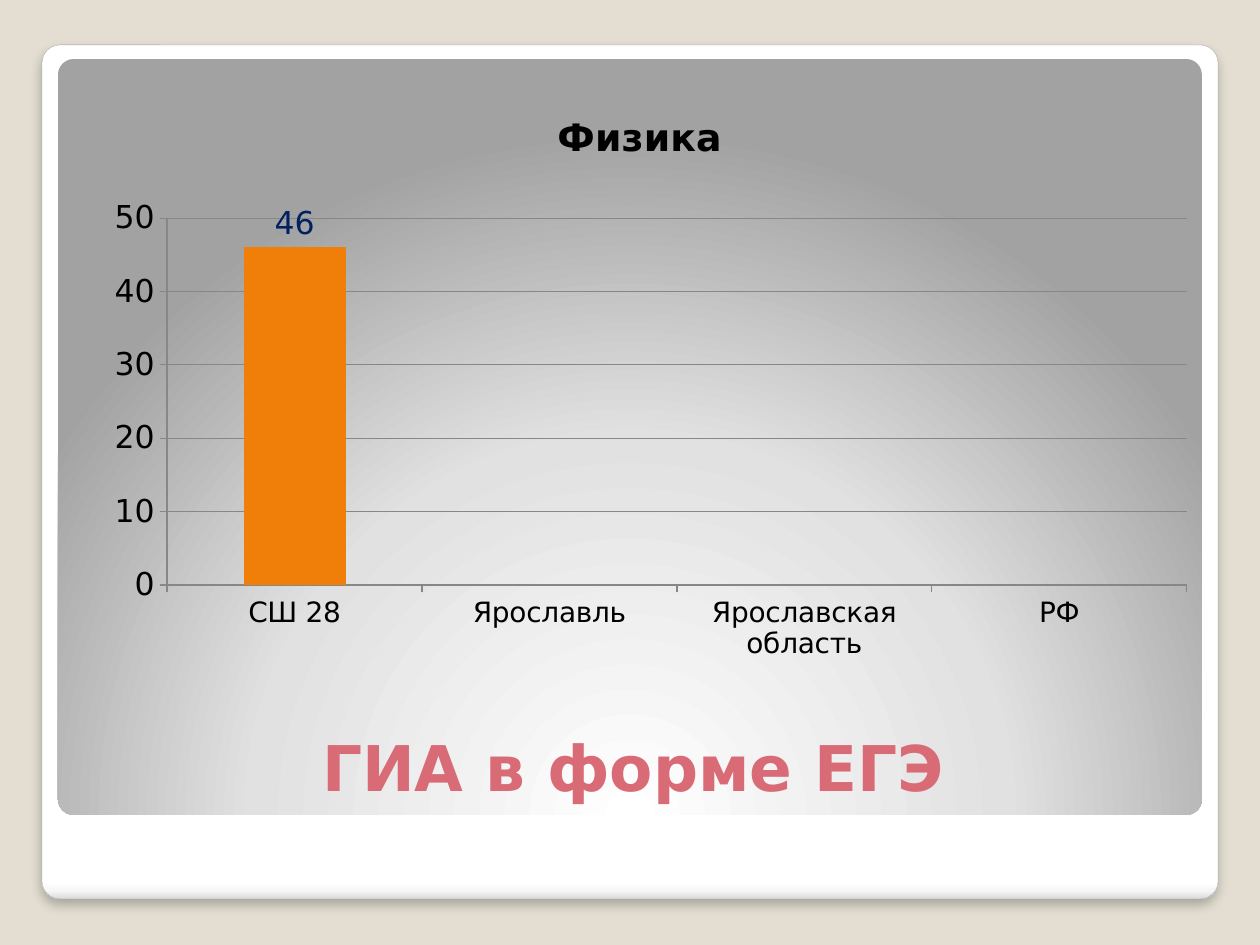
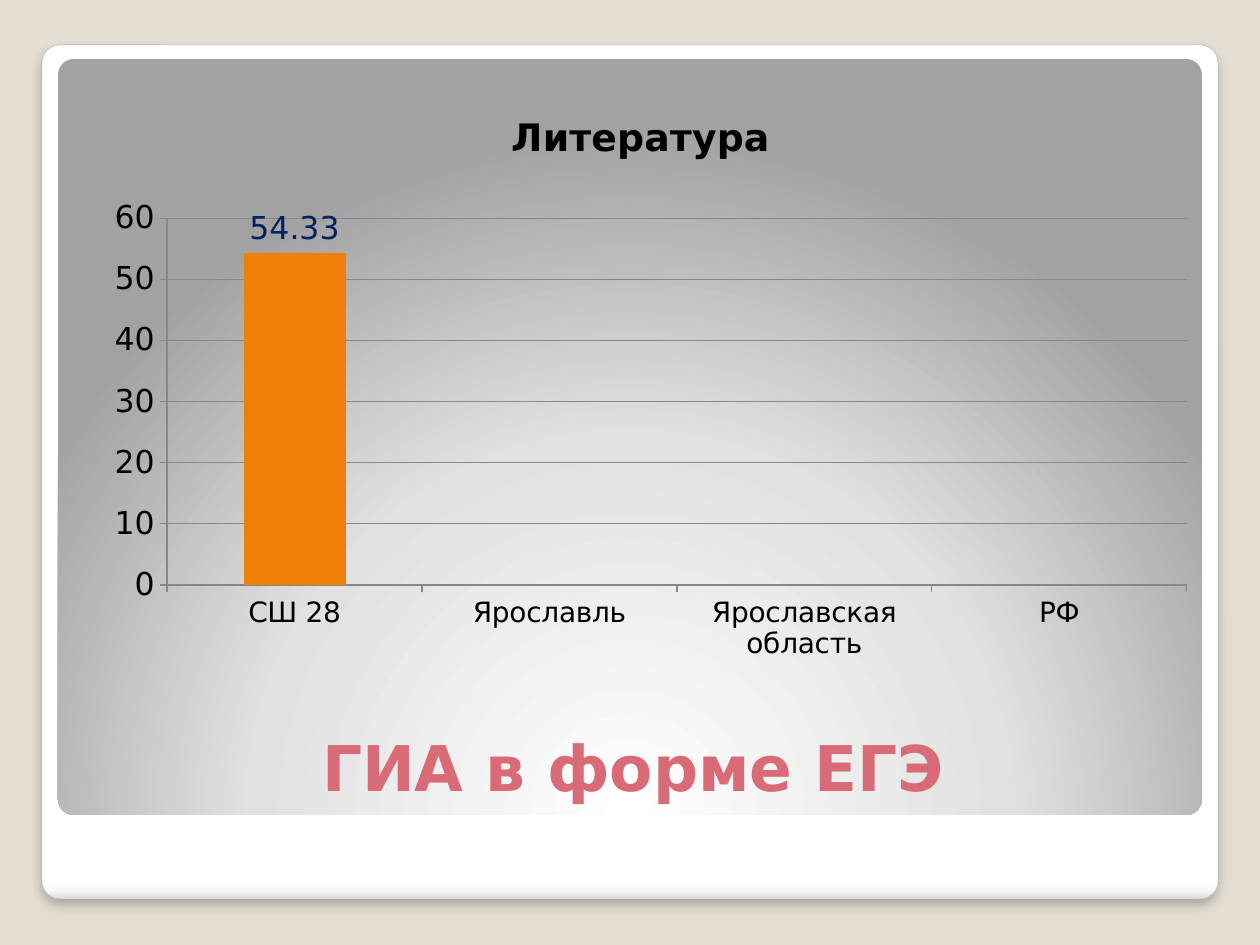
from collections import namedtuple

from pptx import Presentation
from pptx.chart.data import CategoryChartData
from pptx.dml.color import RGBColor
from pptx.enum.chart import XL_CHART_TYPE as ChartType
from pptx.enum.chart import XL_LABEL_POSITION as LabelPosition
from pptx.enum.chart import XL_TICK_MARK as TickMark
from pptx.enum.shapes import MSO_SHAPE as Preset
from pptx.enum.text import MSO_ANCHOR as Anchor
from pptx.enum.text import PP_ALIGN as Align
from pptx.oxml import parse_xml
from pptx.oxml.ns import nsdecls, qn
from pptx.util import Emu, Pt

Box = namedtuple("Box", "left top width height")

PX_PER_INCH = 126
FONT = "DejaVu Sans"
BACKGROUND = "E3DED1"
CARD_LINE = "A4A4A4"
TITLE_COLOR = "D96B77"
BAR_COLOR = "F07F09"
LABEL_COLOR = "002060"
AXIS_COLOR = "878787"
BLACK = "000000"

SLIDE = Box(0, 0, 1260, 945)
CARD = Box(42, 45, 1176, 854)
PANEL = Box(58, 59, 1144, 756)
CHART = Box(69, 73, 1128, 626)
TITLE = Box(69, 659, 1128, 147)

CARD_STOPS = [(0, "FFFFFF"), (98, "FFFFFF"), (99, "F7F7F7"), (100, "DADADA")]
PANEL_STOPS = [(0, "FFFFFF"), (55, "E1E1E1"), (100, "A2A2A2")]
DOWNWARD = '<a:lin ang="5400000" scaled="0"/>'
FROM_BELOW = ('<a:path path="circle">'
              '<a:fillToRect l="50000" t="175000" r="50000" b="-75000"/></a:path>')
CARD_SHADOW = (
    f'<a:effectLst {nsdecls("a")}>'
    '<a:outerShdw blurRad="76200" dist="50800" dir="5400000" rotWithShape="0">'
    f'<a:srgbClr val="{BLACK}"><a:alpha val="25000"/></a:srgbClr>'
    '</a:outerShdw></a:effectLst>')

HEADING = "ГИА в форме ЕГЭ"
CATEGORIES = ["СШ 28", "Ярославль", "Ярославская область", "РФ"]
# Subject, score of the school, left edge of the chart title within the chart
SUBJECTS = [("Физика", 46, 482), ("Литература", 54.33, 435)]


def px(length):
    return Emu(round(length * 914400 / PX_PER_INCH))


def place(box):
    return [px(length) for length in box]


def color(value):
    return RGBColor.from_string(value)


def format_font(font, text_color, **values):
    font.color.rgb = color(text_color)
    for name, value in {"name": FONT, **values}.items():
        setattr(font, name, value)


def add_gradient_card(slide, box, stops, direction):
    shape = slide.shapes.add_shape(Preset.ROUNDED_RECTANGLE, *place(box))
    shape.adjustments[0] = 0.021
    shape.shadow.inherit = False
    shape.line.fill.background()
    shape.fill.background()
    stop_list = "".join(
        f'<a:gs pos="{position * 1000}"><a:srgbClr val="{value}"/></a:gs>'
        for position, value in stops)
    gradient = parse_xml(f'<a:gradFill {nsdecls("a")} rotWithShape="1">'
                         f'<a:gsLst>{stop_list}</a:gsLst>{direction}</a:gradFill>')
    properties = shape.element.spPr
    properties.replace(properties.find(qn("a:noFill")), gradient)
    return shape


def add_frame(slide):
    """Draw the background, the white card and the grey panel."""
    slide.background.fill.solid()
    slide.background.fill.fore_color.rgb = color(BACKGROUND)
    card = add_gradient_card(slide, CARD, CARD_STOPS, DOWNWARD)
    card.line.color.rgb = color(CARD_LINE)
    card.line.width = Pt(0.16)
    properties = card.element.spPr
    properties.replace(properties.find(qn("a:effectLst")), parse_xml(CARD_SHADOW))
    add_gradient_card(slide, PANEL, PANEL_STOPS, FROM_BELOW)


def add_heading(slide, box):
    text_frame = slide.shapes.add_textbox(*place(box)).text_frame
    frame_format = {"word_wrap": True, "vertical_anchor": Anchor.BOTTOM,
                    "margin_bottom": px(2)}
    for name, value in frame_format.items():
        setattr(text_frame, name, value)
    paragraph = text_frame.paragraphs[0]
    paragraph.alignment = Align.CENTER
    run = paragraph.add_run()
    run.text = HEADING
    format_font(run.font, TITLE_COLOR, size=Pt(36), bold=True)


def make_layout(parent, target="", **fractions):
    """Return a manual layout that takes the place of the parent's own one."""
    for layout in parent.findall(qn("c:layout")):
        parent.remove(layout)
    modes = '<c:xMode val="edge"/><c:yMode val="edge"/>'
    values = "".join(f'<c:{name} val="{value}"/>' for name, value in fractions.items())
    return parse_xml(f'<c:layout {nsdecls("c")}><c:manualLayout>'
                     f'{target}{modes}{values}</c:manualLayout></c:layout>')


def clear_fill():
    return parse_xml(f'<c:spPr {nsdecls("c", "a")}><a:noFill/>'
                     '<a:ln><a:noFill/></a:ln></c:spPr>')


def format_chart_title(chart, box, subject, title_left):
    chart.has_title = True
    paragraph = chart.chart_title.text_frame.paragraphs[0]
    run = paragraph.add_run()
    run.text = subject
    format_font(run.font, BLACK, size=Pt(21.6), bold=True)
    title = chart.chart_title.element
    layout = make_layout(title, x=round(title_left / box.width, 3), y=0.05)
    title.find(qn("c:tx")).addnext(layout)


def format_axes(chart):
    chart.value_axis.has_major_gridlines = True
    for axis, size in ((chart.category_axis, 16), (chart.value_axis, 18)):
        axis.major_tick_mark = TickMark.OUTSIDE
        axis.minor_tick_mark = TickMark.NONE
        format_font(axis.tick_labels.font, BLACK, size=Pt(size))
    for lines in (chart.category_axis, chart.value_axis,
                  chart.value_axis.major_gridlines):
        lines.format.line.color.rgb = color(AXIS_COLOR)
        lines.format.line.width = Pt(0.75)


def format_columns(plot):
    plot.gap_width = 150
    plot.vary_by_categories = False
    fill = plot.series[0].format.fill
    fill.solid()
    fill.fore_color.rgb = color(BAR_COLOR)
    plot.has_data_labels = True
    labels = plot.data_labels
    labels.show_value = True
    labels.position = LabelPosition.OUTSIDE_END
    format_font(labels.font, LABEL_COLOR, size=Pt(18))


def add_score_chart(slide, box, subject, score, title_left):
    data = CategoryChartData()
    data.categories = CATEGORIES
    data.add_series("Series 1", [score, None, None, None])
    chart = slide.shapes.add_chart(
        ChartType.COLUMN_CLUSTERED, *place(box), data).chart
    chart.has_legend = False
    format_font(chart.font, BLACK, size=Pt(18))
    format_chart_title(chart, box, subject, title_left)
    format_axes(chart)
    format_columns(chart.plots[0])
    chart_body = chart.element.find(qn("c:chart"))
    chart_body.addnext(clear_fill())
    plot_area = chart_body.find(qn("c:plotArea"))
    layout = make_layout(plot_area, '<c:layoutTarget val="inner"/>',
                         x=0.087, y=0.232, w=0.904, h=0.586)
    plot_area.insert(0, layout)
    plot_area.append(clear_fill())


def add_subject_slide(presentation, subject, score, title_left):
    slide = presentation.slides.add_slide(presentation.slide_layouts[6])
    add_frame(slide)
    add_heading(slide, TITLE)
    add_score_chart(slide, CHART, subject, score, title_left)


def main():
    presentation = Presentation()
    presentation.slide_width = px(SLIDE.width)
    presentation.slide_height = px(SLIDE.height)
    for subject, score, title_left in SUBJECTS:
        add_subject_slide(presentation, subject, score, title_left)
    presentation.save("out.pptx")


if __name__ == "__main__":
    main()
